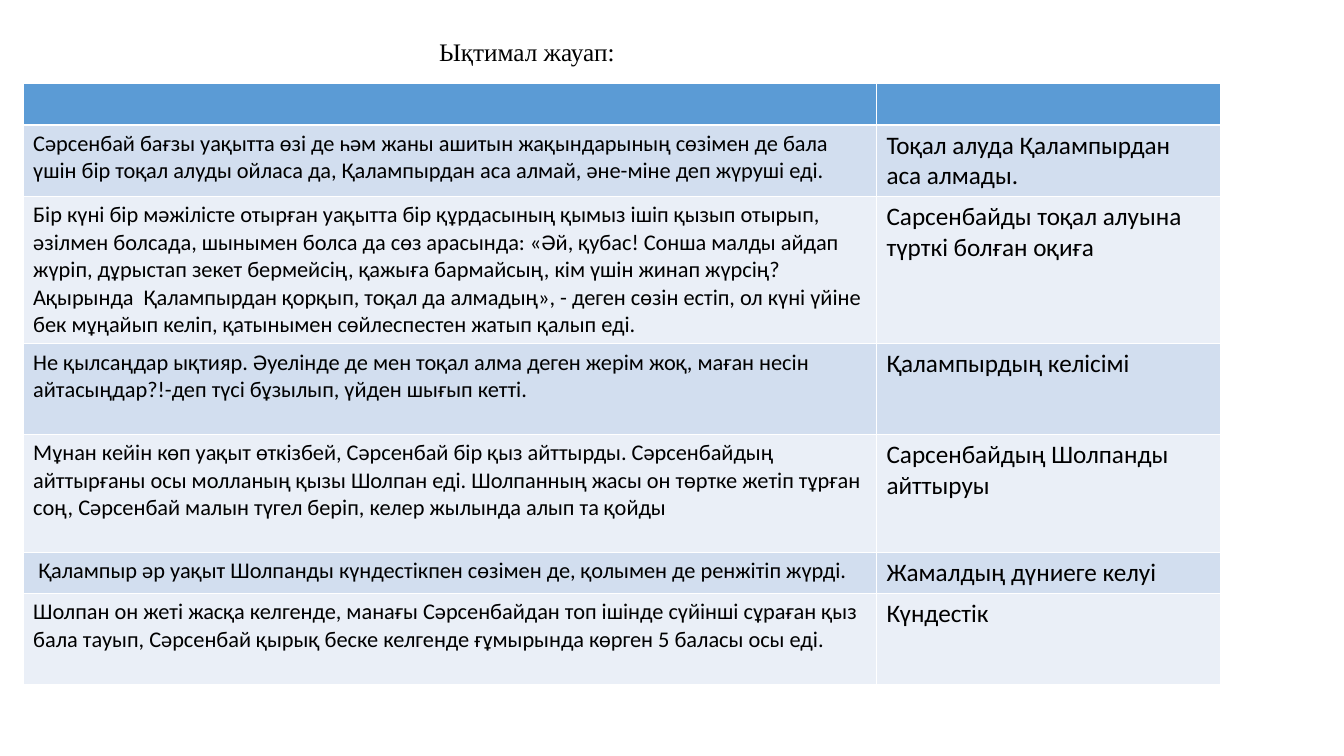
"""Build a slide with a titled two-column table of story passages and their headings."""
from lxml.etree import SubElement
from pptx import Presentation
from pptx.dml.color import RGBColor
from pptx.enum.text import MSO_AUTO_SIZE, PP_ALIGN
from pptx.oxml.ns import qn
from pptx.util import Inches, Pt

COLORS = {
    "header": "5B9BD5",
    "dark_band": "D2DEEF",
    "light_band": "EAEFF7",
    "border": "FFFFFF",
    "text": "000000",
}
COLUMN_WIDTHS = [8.47, 3.41]
ROW_HEIGHTS = [0.41, 0.7, 1.43, 0.9, 1.17, 0.41, 0.9]
FONT_SIZES = [16, 18]
ROWS = [
    ("", ""),
    ("Сәрсенбай бағзы уақытта ѳзі де һәм жаны ашитын жақындарының сѳзімен де бала "
     "үшін бір тоқал алуды ойласа да, Қалампырдан аса алмай, әне-міне деп жүруші еді.",
     "Тоқал алуда Қалампырдан аса алмады."),
    ("Бір күні бір мәжілісте отырған уақытта бір құрдасының қымыз ішіп қызып отырып, "
     "әзілмен болсада, шынымен болса да сѳз арасында: «Әй, қубас! Сонша малды айдап "
     "жүріп, дұрыстап зекет бермейсің, қажыға бармайсың, кім үшін жинап жүрсің? "
     "Ақырында  Қалампырдан қорқып, тоқал да алмадың», - деген сѳзін естіп, ол күні үйіне "
     "бек мұңайып келіп, қатынымен сѳйлеспестен жатып қалып еді.",
     "Сарсенбайды тоқал алуына түрткі болған оқиға"),
    ("He қылсаңдар ықтияр. Әуелінде де мен тоқал алма деген жерім жоқ, маған несін "
     "айтасыңдар?!-деп түсі бұзылып, үйден шығып кетті.",
     "Қалампырдың келісімі"),
    ("Мұнан кейін кѳп уақыт ѳткізбей, Сәрсенбай бір қыз айттырды. Сәрсенбайдың "
     "айттырғаны осы молланың қызы Шолпан еді. Шолпанның жасы он тѳртке жетіп тұрған "
     "соң, Сәрсенбай малын түгел беріп, келер жылында алып та қойды",
     "Сарсенбайдың Шолпанды айттыруы"),
    (" Қалампыр әр уақыт Шолпанды күндестікпен сѳзімен де, қолымен де ренжітіп жүрді.",
     "Жамалдың дүниеге келуі"),
    ("Шолпан он жеті жасқа келгенде, манағы Сәрсенбайдан топ ішінде сүйінші сұраған қыз "
     "бала тауып, Сәрсенбай қырық беске келгенде ғұмырында кѳрген 5 баласы осы еді.",
     "Күндестік"),
]


def style_font(font, name, size):
    font.name = name
    font.size = Pt(size)
    font.color.rgb = RGBColor.from_string(COLORS["text"])


def add_border(cell, side, width):
    line = SubElement(cell._tc.get_or_add_tcPr(), qn(f"a:{side}"), w=str(Pt(width)))
    fill = SubElement(line, qn("a:solidFill"))
    SubElement(fill, qn("a:srgbClr"), val=COLORS["border"])


deck = Presentation()
deck.slide_width = Inches(13.34)
deck.slide_height = Inches(7.5)
page = deck.slides.add_slide(deck.slide_layouts[6])

table = page.shapes.add_table(
    len(ROWS), len(COLUMN_WIDTHS), Inches(0.23), Inches(0.83),
    Inches(sum(COLUMN_WIDTHS)), Inches(sum(ROW_HEIGHTS)),
).table
for column, width in zip(table.columns, COLUMN_WIDTHS):
    column.width = Inches(width)
for row, height in zip(table.rows, ROW_HEIGHTS):
    row.height = Inches(height)

for row_index, texts in enumerate(ROWS):
    band = "header" if row_index == 0 else "dark_band" if row_index % 2 else "light_band"
    widths = {
        "lnL": 0.45,
        "lnR": 0.45,
        "lnT": 1.47 if row_index == 1 else 0.45,
        "lnB": 1.47 if row_index == 0 else 0.45,
    }
    for column_index, text in enumerate(texts):
        cell = table.cell(row_index, column_index)
        for side, width in widths.items():
            add_border(cell, side, width)
        cell.fill.solid()
        cell.fill.fore_color.rgb = RGBColor.from_string(COLORS[band])
        para = cell.text_frame.paragraphs[0]
        para.text = text
        style_font(para.font, "Calibri", FONT_SIZES[column_index])

title_box = page.shapes.add_textbox(Inches(4.25), Inches(0.31), Inches(2.02), Inches(0.4))
title_box.text_frame.word_wrap = False
title_box.text_frame.auto_size = MSO_AUTO_SIZE.SHAPE_TO_FIT_TEXT
title = title_box.text_frame.paragraphs[0]
title.text = "Ықтимал жауап: "
title.alignment = PP_ALIGN.CENTER
style_font(title.font, "Times New Roman", 18)

deck.save("out.pptx")
